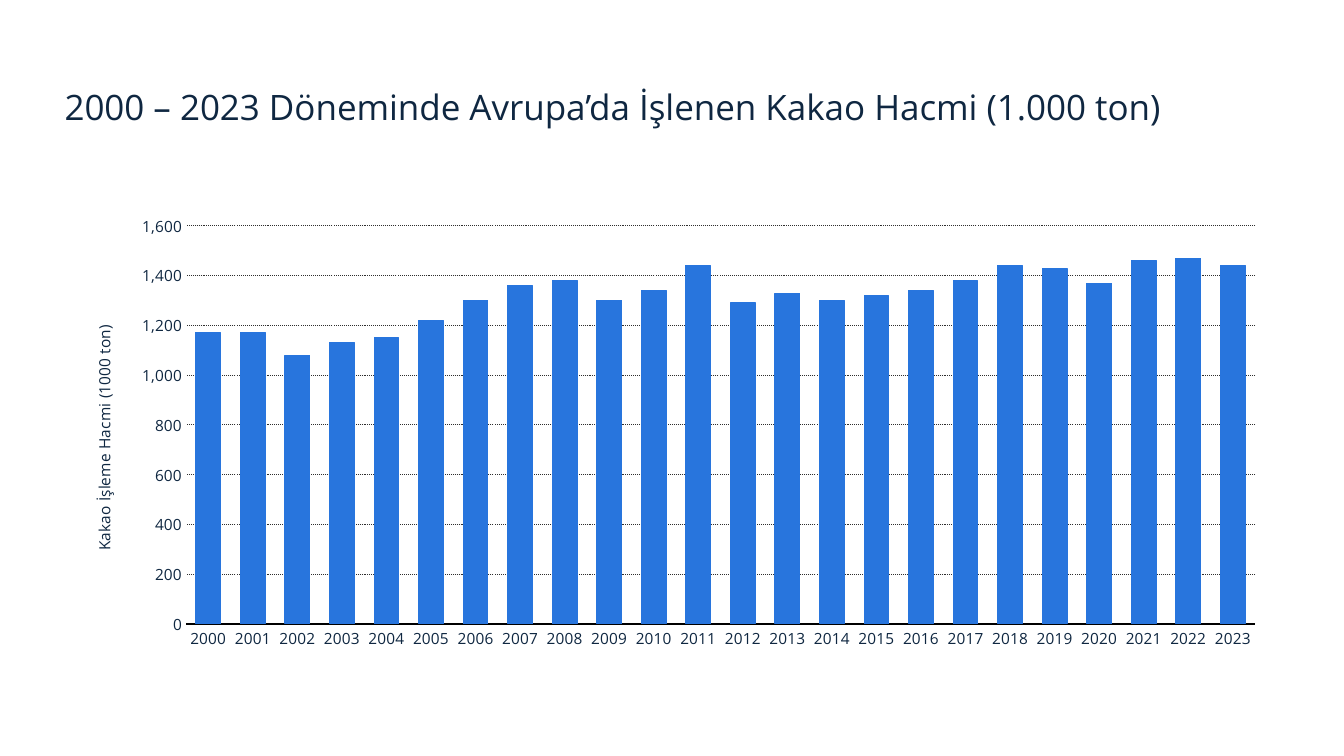
from dataclasses import dataclass

from lxml.etree import SubElement
from pptx import Presentation
from pptx.chart.data import CategoryChartData
from pptx.dml.color import RGBColor
from pptx.enum.chart import XL_CHART_TYPE as ChartType, XL_TICK_MARK as TickMark
from pptx.enum.dml import MSO_LINE_DASH_STYLE as Dash
from pptx.enum.text import MSO_ANCHOR as Anchor, MSO_AUTO_SIZE as AutoSize, PP_ALIGN as Align
from pptx.oxml.ns import qn
from pptx.util import Inches, Pt


@dataclass(frozen=True)
class Theme:
    font: str = "Open Sans"
    ink: RGBColor = RGBColor(0x0F, 0x27, 0x41)
    bar: RGBColor = RGBColor(0x28, 0x75, 0xDD)
    baseline: RGBColor = RGBColor(0, 0, 0)
    grid: RGBColor = RGBColor(0x2F, 0x2F, 0x2F)
    title_size: Pt = Pt(25)
    label_size: Pt = Pt(11)


THEME = Theme()


def write(frame, text, *, size, color=THEME.ink, align=Align.LEFT, space_after=0):
    paragraph = frame.paragraphs[0]
    paragraph.alignment = align
    paragraph.space_before = Pt(0)
    paragraph.space_after = Pt(space_after)
    run = paragraph.add_run()
    run.text = text
    run.font.name = THEME.font
    run.font.size = size
    run.font.bold = False
    run.font.color.rgb = color


def place(chart_part, **settings):
    """Give a chart part a manual layout in fractions of the chart."""
    layout = chart_part.find(qn("c:layout"))
    if layout is None:
        layout = SubElement(chart_part, qn("c:layout"))
        chart_part.insert(0 if chart_part.find(qn("c:tx")) is None else 1, layout)
    manual = SubElement(layout, qn("c:manualLayout"))
    for tag, value in settings.items():
        SubElement(manual, qn(f"c:{tag}")).set("val", str(value))


prs = Presentation()
prs.slide_width = Inches(13.33)
prs.slide_height = Inches(7.5)
slide = prs.slides.add_slide(prs.slide_layouts[5])

headline = slide.shapes.title
headline.left, headline.top = Inches(0.54), Inches(0.46)
headline.width, headline.height = Inches(12.24), Inches(0.86)
headline_frame = headline.text_frame
headline_frame.auto_size = AutoSize.NONE
headline_frame.word_wrap = True
headline_frame.vertical_anchor = Anchor.BOTTOM
write(headline_frame, "2000 – 2023 Döneminde Avrupa’da İşlenen Kakao Hacmi (1.000 ton)",
      size=THEME.title_size, space_after=5)

cocoa_volume = CategoryChartData()
cocoa_volume.categories = [str(year) for year in range(2000, 2024)]
cocoa_volume.add_series("Series 1", [
    1170, 1170, 1080, 1130, 1150, 1220, 1300, 1360, 1380, 1300, 1340, 1440,
    1290, 1330, 1300, 1320, 1340, 1380, 1440, 1430, 1370, 1460, 1470, 1440,
])
chart = slide.shapes.add_chart(
    ChartType.COLUMN_CLUSTERED, Inches(0.64), Inches(2.06), Inches(12.05), Inches(4.54), cocoa_volume
).chart
chart.has_legend = False
chart.has_title = False
chart.font.name = THEME.font
chart.font.size = THEME.label_size
chart.font.color.rgb = THEME.ink

bars = chart.plots[0]
bars.gap_width = 80
bars.overlap = -30
bars.vary_by_categories = False
volume = bars.series[0]
volume.format.fill.solid()
volume.format.fill.fore_color.rgb = THEME.bar
volume.format.line.color.rgb = THEME.bar
volume.format.line.width = Pt(0.75)

years, tons = chart.category_axis, chart.value_axis
for axis in (years, tons):
    axis.major_tick_mark = TickMark.NONE
    axis.minor_tick_mark = TickMark.NONE
years.format.line.color.rgb = THEME.baseline
years.format.line.width = Pt(2)

tons.minimum_scale = 0
tons.maximum_scale = 1600
tons.major_unit = 200
tons.tick_labels.number_format = "#,##0"
tons.tick_labels.number_format_is_linked = False
tons.format.line.fill.background()
grid_line = tons.major_gridlines.format.line
grid_line.color.rgb = THEME.grid
grid_line.width = Pt(0.75)
grid_line.dash_style = Dash.ROUND_DOT

tons_title = tons.axis_title
write(tons_title.text_frame, "Kakao İşleme Hacmi (1000 ton)",
      size=THEME.label_size, align=Align.CENTER)
title_body = tons_title.text_frame._txBody.find(qn("a:bodyPr"))
title_body.set("rot", "-5400000")
title_body.set("vert", "horz")

place(tons_title._element, xMode="edge", yMode="edge", x=0.02, y=0.25)
place(chart._chartSpace.chart.plotArea,
      layoutTarget="inner", xMode="edge", yMode="edge", x=0.1, y=0.04, w=0.88, h=0.87)

prs.save("out.pptx")
